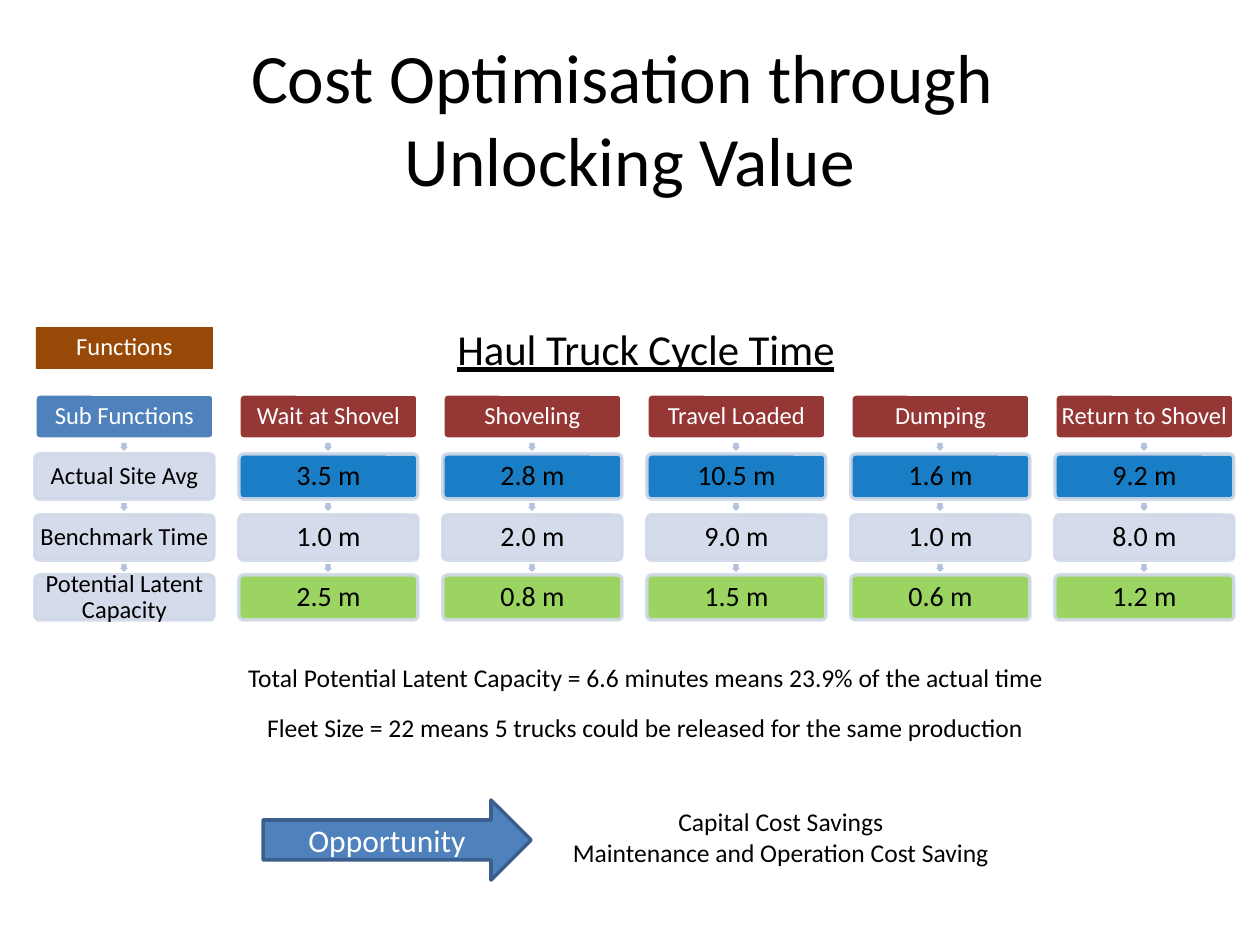
from lxml import etree
from pptx import Presentation
from pptx.dml.color import RGBColor
from pptx.enum.shapes import MSO_SHAPE
from pptx.enum.text import MSO_ANCHOR, PP_ALIGN
from pptx.oxml.ns import qn
from pptx.util import Emu, Pt

ROUNDED, RECTANGLE, ARROW = (
    MSO_SHAPE.ROUNDED_RECTANGLE, MSO_SHAPE.RECTANGLE, MSO_SHAPE.RIGHT_ARROW)
MIDDLE, CENTER = MSO_ANCHOR.MIDDLE, PP_ALIGN.CENTER

BLACK = RGBColor(0x00, 0x00, 0x00)
WHITE = RGBColor(0xFF, 0xFF, 0xFF)
BLUE = RGBColor(0x4F, 0x81, 0xBD)
DARK_BLUE = RGBColor(0x3A, 0x5F, 0x8C)
BRIGHT_BLUE = RGBColor(0x00, 0x70, 0xC0)
PALE_BLUE = RGBColor(0xD0, 0xD8, 0xE8)
ARROW_BLUE = RGBColor(0xB3, 0xC1, 0xDB)
RED = RGBColor(0x95, 0x37, 0x35)
GREEN = RGBColor(0x92, 0xD0, 0x50)
BROWN = RGBColor(0x98, 0x48, 0x07)

# Content: the first column holds the row labels
COLUMNS = [
    ("Sub Functions", "Actual Site Avg", "Benchmark Time", "Potential Latent Capacity"),
    ("Wait at Shovel", "3.5 m", "1.0 m", "2.5 m"),
    ("Shoveling", "2.8 m", "2.0 m", "0.8 m"),
    ("Travel Loaded", "10.5 m", "9.0 m", "1.5 m"),
    ("Dumping", "1.6 m", "1.0 m", "0.6 m"),
    ("Return to Shovel", "9.2 m", "8.0 m", "1.2 m"),
]
LABEL_FILLS = (BLUE, PALE_BLUE, PALE_BLUE, PALE_BLUE)
VALUE_FILLS = (RED, BRIGHT_BLUE, PALE_BLUE, GREEN)

# Free text: place, lines of one paragraph or several, size, underline
TITLE = ((63, 38, 1134, 158), ["Cost Optimisation through \vUnlocking Value"], 39.6, False)
NOTES = [
    ((343, 294, 606, 108), ["Haul Truck Cycle Time"], 24.4, True),
    ((202, 651, 888, 52),
     ["Total Potential Latent Capacity = 6.6 minutes means 23.9% of the actual time"], 14.6, False),
    ((241, 703, 809, 48),
     ["Fleet Size = 22 means 5 trucks could be released for the same production"], 14.6, False),
    ((536, 790, 490, 93),
     ["Capital Cost Savings", "Maintenance and Operation Cost Saving"], 14.6, False),
]

# Grid measures in px
GRID_LEFT, GRID_TOP = 35, 394
BOX_WIDTH, BOX_HEIGHT = 179, 45
COLUMN_STEP, TWO_ROW_STEP = 204, 121
ARROW_SIZE, ARROW_GAP = 8, 4
INSET = 3


def px(value):
    return Emu(round(value * 914400 / 126))


def place(area):
    return [px(value) for value in area]


def write(shape, lines, size, color, underline=False):
    frame = shape.text_frame
    frame.word_wrap = True
    frame.vertical_anchor = MIDDLE
    for index, line in enumerate(lines):
        para = frame.paragraphs[0] if index == 0 else frame.add_paragraph()
        para.alignment = CENTER
        for part_index, part in enumerate(line.split("\v")):
            if part_index:
                para.add_line_break()
            span = para.add_run()
            span.text = part
            span.font.name = "Calibri"
            span.font.size = Pt(size)
            span.font.color.rgb = color
            if underline:
                span.font.underline = True


def write_compact(shape, text, size, color):
    write(shape, [text], size, color)
    frame = shape.text_frame
    frame.margin_left = frame.margin_right = px(INSET)
    frame.margin_top = frame.margin_bottom = px(INSET)
    frame.paragraphs[0].line_spacing = 0.9


def add_shape(parent, kind, area, fill, line=None):
    shape = parent.shapes.add_shape(kind, *place(area))
    shape.shadow.inherit = False
    shape.fill.solid()
    shape.fill.fore_color.rgb = fill
    if line is None:
        shape.line.fill.background()
    else:
        shape.line.color.rgb = line
        shape.line.width = Pt(2)
    return shape


def add_rounded(parent, area, fill, line):
    box = add_shape(parent, ROUNDED, area, fill, line)
    box.adjustments[0] = 0.1
    return box


def make_translucent(shape):
    for color in shape.element.spPr.iter(qn("a:srgbClr")):
        etree.SubElement(color, qn("a:alpha")).set("val", "90000")


def add_note(page, area, lines, size, underline):
    write(page.shapes.add_textbox(*place(area)), lines, size, BLACK, underline)


def add_column(grid, index, texts):
    left = GRID_LEFT + index * COLUMN_STEP
    fills = VALUE_FILLS if index else LABEL_FILLS
    for row, (text, fill) in enumerate(zip(texts, fills)):
        top = GRID_TOP + row * TWO_ROW_STEP // 2
        area = (left, top, BOX_WIDTH, BOX_HEIGHT)
        if row == 0:
            box = add_rounded(grid, area, fill, WHITE)
            write_compact(box, text, 14, WHITE)
        else:
            box = add_rounded(grid, area, fill, PALE_BLUE)
            make_translucent(box)
            write_compact(box, text, 16 if index else 14, BLACK)
        if row < len(texts) - 1:
            arrow = add_shape(
                grid, ARROW,
                (left + (BOX_WIDTH - ARROW_SIZE) // 2, top + BOX_HEIGHT + ARROW_GAP,
                 ARROW_SIZE, ARROW_SIZE), ARROW_BLUE)
            arrow.rotation = 90
            arrow.adjustments[0] = 0.67


def main():
    deck = Presentation()
    deck.slide_width, deck.slide_height = px(1260), px(945)
    page = deck.slides.add_slide(deck.slide_layouts[6])

    add_note(page, *TITLE)

    # Cycle time grid
    grid = page.shapes.add_group_shape()
    for index, texts in enumerate(COLUMNS):
        add_column(grid, index, texts)

    # Functions label
    label = page.shapes.add_group_shape()
    add_rounded(label, (GRID_LEFT, 326, BOX_WIDTH, BOX_HEIGHT), BROWN, WHITE)
    face = add_shape(label, RECTANGLE, (36, 327, 177, 42), BROWN)
    write_compact(face, "Functions", 14, WHITE)

    # Heading and conclusions
    for note in NOTES:
        add_note(page, *note)

    # Opportunity arrow
    opportunity = add_shape(page, ARROW, (263, 800, 268, 80), BLUE, DARK_BLUE)
    write(opportunity, ["Opportunity"], 18, WHITE)

    deck.save("out.pptx")


if __name__ == "__main__":
    main()
